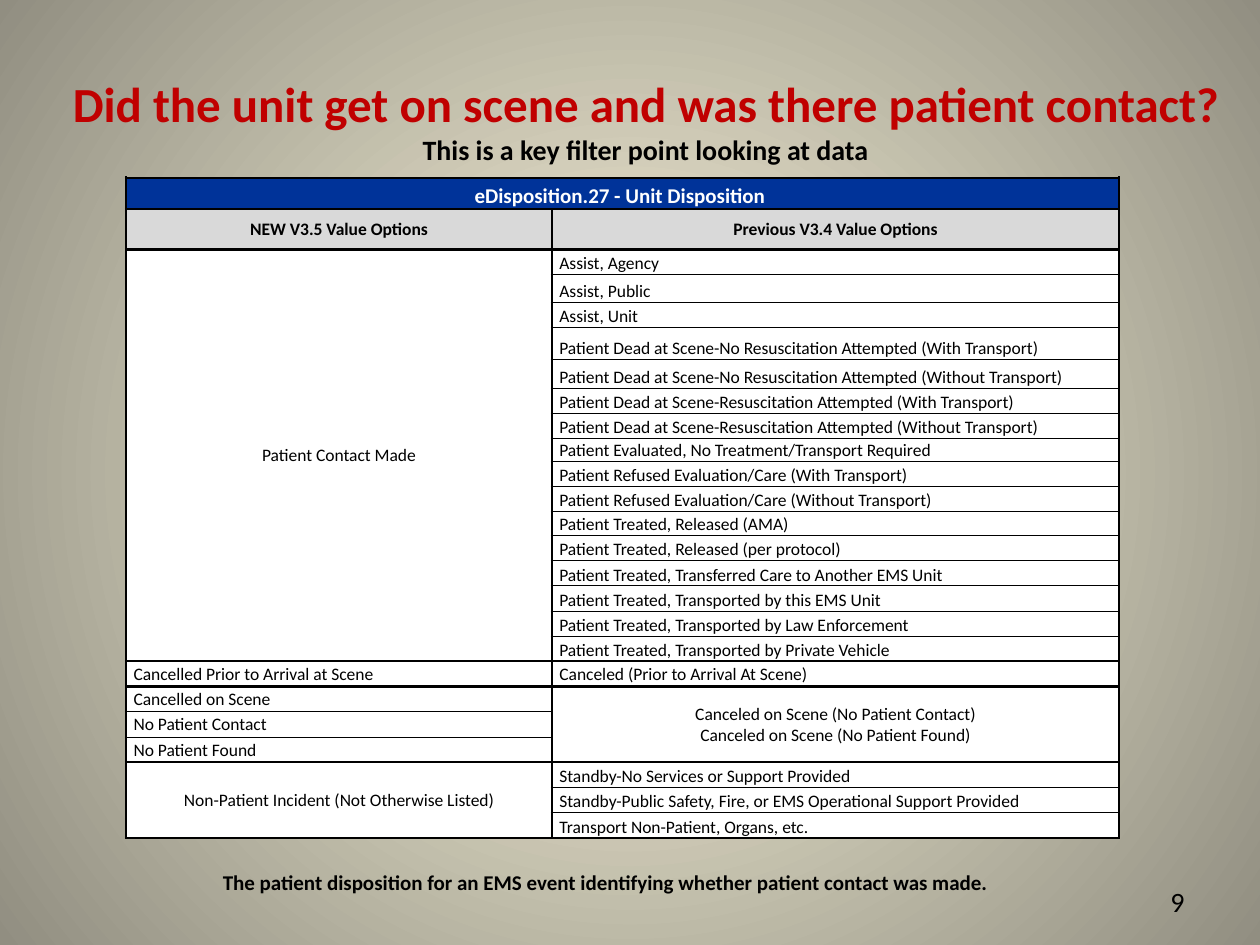
from lxml.etree import SubElement
from pptx import Presentation
from pptx.dml.color import RGBColor
from pptx.enum.text import MSO_ANCHOR, MSO_AUTO_SIZE, PP_ALIGN
from pptx.oxml import parse_xml
from pptx.oxml.ns import nsdecls, qn
from pptx.util import Inches, Pt

BLACK = RGBColor(0, 0, 0)
WHITE = RGBColor(255, 255, 255)
RED = RGBColor(0xC0, 0, 0)
NAVY = RGBColor(0, 0x33, 0x99)
GRAY = RGBColor(0xD9, 0xD9, 0xD9)
BG_CENTER = RGBColor(0xFC, 0xF7, 0xDD)
BG_EDGE = RGBColor(0x91, 0x8E, 0x81)


def write(p, text, size, color=BLACK, bold=False, align=PP_ALIGN.LEFT):
    p.text = text
    p.alignment = align
    for br in p._p.findall(qn("a:br")):
        SubElement(br, qn("a:rPr")).set("sz", str(size * 100))
    for r in p.runs:
        for name, value in {"name": "Calibri", "size": Pt(size), "bold": bold}.items():
            setattr(r.font, name, value)
        r.font.color.rgb = color


def set_borders(cell, widths):
    tcPr = cell._tc.get_or_add_tcPr()
    for i, (side, width) in enumerate(widths.items()):
        tcPr.insert(i, parse_xml(
            f'<a:{side} {nsdecls("a")} w="{Pt(width)}"><a:solidFill>'
            f'<a:srgbClr val="{BLACK}"/></a:solidFill></a:{side}>'))


prs = Presentation()
prs.slide_width, prs.slide_height = Inches(10), Inches(7.5)
s = prs.slides.add_slide(prs.slide_layouts[5])

# Background: radial gradient from the centre
fill = s.background.fill
fill.gradient()
for stop, color, pos in zip(fill.gradient_stops, (BG_CENTER, BG_EDGE), (0, 1)):
    stop.color.rgb = color
    stop.position = pos
grad = s._element.find(".//" + qn("a:gradFill"))
grad.replace(grad.find(qn("a:lin")), parse_xml(
    f'<a:path {nsdecls("a")} path="circle">'
    '<a:fillToRect l="50000" t="50000" r="50000" b="50000"/></a:path>'))

# Title with subtitle line
title = s.shapes.title
title.left, title.top, title.width, title.height = map(Inches, (0.42, 0.53, 9.41, 0.84))
tf = title.text_frame
tf.word_wrap = False
tf.auto_size = MSO_AUTO_SIZE.SHAPE_TO_FIT_TEXT
write(tf.paragraphs[0], "Did the unit get on scene and was there patient contact?",
      28, RED, True, PP_ALIGN.CENTER)
write(tf.add_paragraph(), "This is a key filter point looking at data",
      16, BLACK, True, PP_ALIGN.CENTER)

# Table content: text by starting row, for each column
contact = [
    "Assist, Agency",
    "Assist, Public",
    "Assist, Unit",
    "Patient Dead at Scene-No Resuscitation Attempted (With Transport)",
    "Patient Dead at Scene-No Resuscitation Attempted (Without Transport)",
    "Patient Dead at Scene-Resuscitation Attempted (With Transport)",
    "Patient Dead at Scene-Resuscitation Attempted (Without Transport)",
    "Patient Evaluated, No Treatment/Transport Required",
    "Patient Refused Evaluation/Care (With Transport)",
    "Patient Refused Evaluation/Care (Without Transport)",
    "Patient Treated, Released (AMA)",
    "Patient Treated, Released (per protocol)",
    "Patient Treated, Transferred Care to Another EMS Unit",
    "Patient Treated, Transported by this EMS Unit",
    "Patient Treated, Transported by Law Enforcement",
    "Patient Treated, Transported by Private Vehicle",
]
standby = [
    "Standby-No Services or Support Provided",
    "Standby-Public Safety, Fire, or EMS Operational Support Provided",
    "Transport Non-Patient, Organs, etc.",
]
new_values = {
    0: "eDisposition.27 - Unit Disposition ",
    1: "NEW V3.5 Value Options",
    2: "Patient Contact Made",
    18: "Cancelled Prior to Arrival at Scene",
    19: "Cancelled on Scene",
    20: "No Patient Contact",
    21: "No Patient Found",
    22: "Non-Patient Incident (Not Otherwise Listed)",
}
old_values = {
    1: "Previous V3.4 Value Options",
    **dict(enumerate(contact, 2)),
    18: "Canceled (Prior to Arrival At Scene)",
    19: "Canceled on Scene (No Patient Contact)\nCanceled on Scene (No Patient Found)",
    **dict(enumerate(standby, 22)),
}
heights = {0: 0.25, 1: 0.32, 3: 0.22, 5: 0.25, 6: 0.23, 9: 0.18, 12: 0.19}
group_edges = {0, 1, 2, 18, 19, 22, 25}

# Table grid
table = s.shapes.add_table(25, 2, Inches(1), Inches(1.41), Inches(7.88), Inches(5.28)).table
table.first_row = table.horz_banding = False
for col, width in zip(table.columns, (3.38, 4.5)):
    col.width = Inches(width)
for i, row in enumerate(table.rows):
    row.height = Inches(heights.get(i, 0.2))
for first, last in (((0, 0), (0, 1)), ((2, 0), (17, 0)), ((19, 1), (21, 1)), ((22, 0), (24, 0))):
    table.cell(*first).merge(table.cell(*last))

# Table cells: merged and header cells are centred
for c, values in enumerate((new_values, old_values)):
    for row, text in values.items():
        cell = table.cell(row, c)
        header = row < 2
        centered = header or cell.is_merge_origin
        low = row == 0 or (c == 1 and not centered and row != 18)
        cell.vertical_anchor = MSO_ANCHOR.BOTTOM if low else MSO_ANCHOR.MIDDLE
        cell.margin_left = Inches(0.01 if centered else 0.06)
        cell.margin_right = cell.margin_top = Inches(0.01)
        cell.margin_bottom = 0
        cell.fill.solid()
        cell.fill.fore_color.rgb = (NAVY, GRAY)[row] if header else WHITE
        write(cell.text_frame.paragraphs[0], text, 10 if row else 12,
              BLACK if row else WHITE, header,
              PP_ALIGN.CENTER if centered else PP_ALIGN.LEFT)
        end = row + (cell.span_height if cell.is_merge_origin else 1)
        set_borders(cell, {"a"[:0] + "lnL": 1.5, "lnR": 1.5,
                           "lnT": 1.5 if row in group_edges else 0.5,
                           "lnB": 1.5 if end in group_edges else 0.5})

# Footnote and slide number
for box, text, size, bold, align in (
    ((1.67, 6.85, 7.5, 0.3),
     "The patient disposition for an EMS event identifying whether patient contact was made.",
     12, True, PP_ALIGN.LEFT),
    ((7.17, 6.97, 2.33, 0.37), "9", 16, False, PP_ALIGN.RIGHT),
):
    tf = s.shapes.add_textbox(*map(Inches, box)).text_frame
    tf.word_wrap = True
    tf.auto_size = MSO_AUTO_SIZE.SHAPE_TO_FIT_TEXT
    write(tf.paragraphs[0], text, size, BLACK, bold, align)

prs.save("out.pptx")
